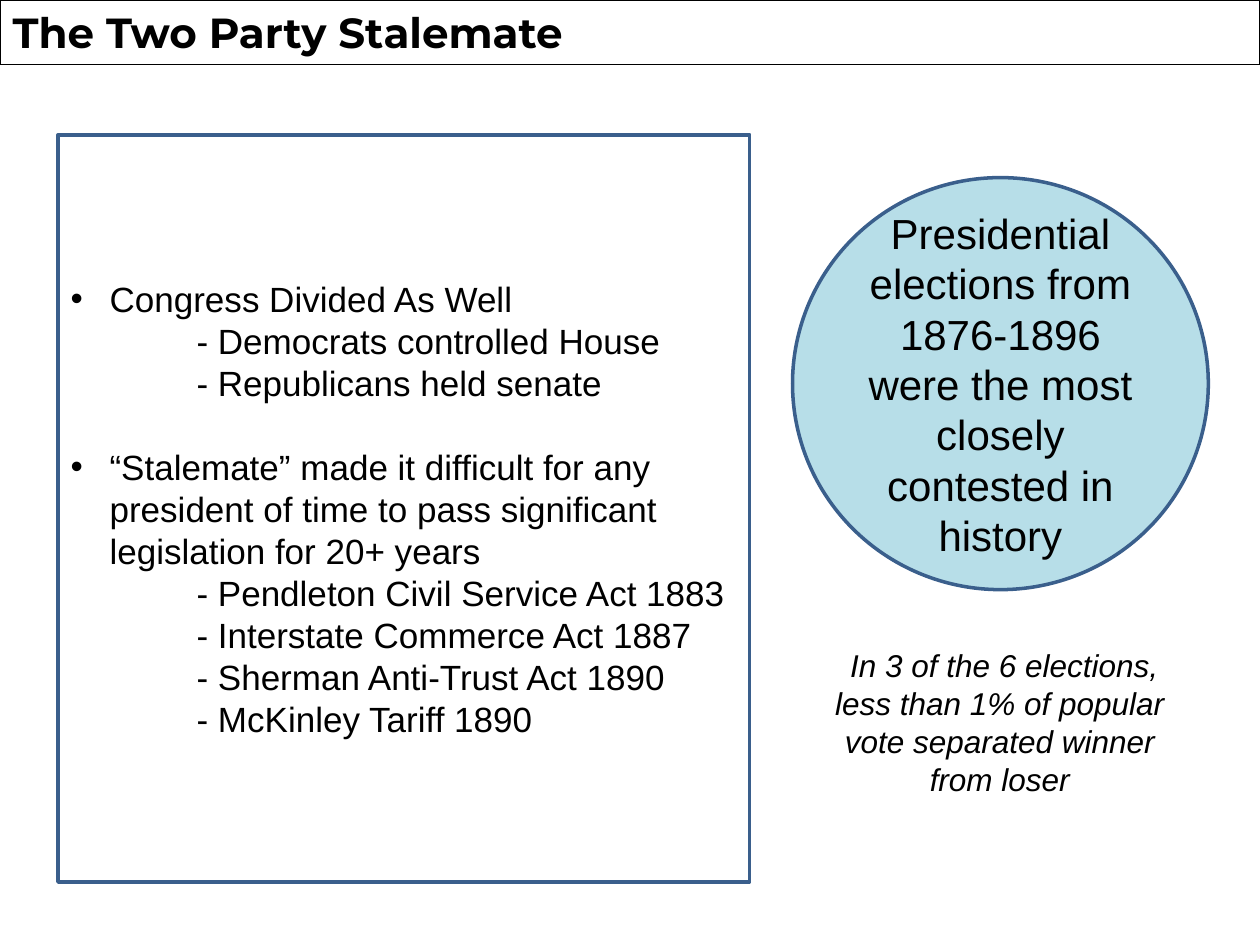
from pptx import Presentation
from pptx.dml.color import RGBColor
from pptx.enum.shapes import MSO_SHAPE
from pptx.enum.text import MSO_ANCHOR, MSO_AUTO_SIZE, PP_ALIGN
from pptx.oxml.xmlchemy import OxmlElement
from pptx.util import Inches, Pt

BLACK = RGBColor(0x00, 0x00, 0x00)
WHITE = RGBColor(0xFF, 0xFF, 0xFF)
BORDER_BLUE = RGBColor(0x3A, 0x5F, 0x8C)
PALE_BLUE = RGBColor(0xB7, 0xDE, 0xE8)

TOPICS = [
    ("Congress Divided As Well",
     ["Democrats controlled House", "Republicans held senate"]),
    ("“Stalemate” made it difficult for any president of time "
     "to pass significant legislation for 20+ years",
     ["Pendleton Civil Service Act 1883", "Interstate Commerce Act 1887",
      "Sherman Anti-Trust Act 1890", "McKinley Tariff 1890"]),
]


def place(shape, left, top, width, height):
    shape.left, shape.top = Inches(left), Inches(top)
    shape.width, shape.height = Inches(width), Inches(height)


def outline(shape, color, width):
    shape.line.color.rgb = color
    shape.line.width = Pt(width)


def set_up_text(shape, anchor):
    text_frame = shape.text_frame
    text_frame.word_wrap = True
    text_frame.auto_size = MSO_AUTO_SIZE.NONE
    text_frame.vertical_anchor = anchor
    return text_frame


def format_paragraph(paragraph, size, align=PP_ALIGN.LEFT, font="Arial",
                     bold=False, italic=False):
    paragraph.alignment = align
    paragraph.space_before = Pt(0)
    for run in paragraph.runs:
        run.font.name = font
        run.font.size = Pt(size)
        run.font.bold = bold
        run.font.italic = italic
        run.font.color.rgb = BLACK


def set_bullet(paragraph, margin, indent, character=None):
    """Set the indents in inches, with a bullet character or none."""
    properties = paragraph._p.get_or_add_pPr()
    properties.set("marL", str(Inches(margin)))
    properties.set("indent", str(Inches(indent)))
    bullet = OxmlElement("a:buChar" if character else "a:buNone")
    if character:
        bullet.set("char", character)
    properties.append(bullet)


def add_title(slide, text):
    title = slide.shapes.title
    place(title, 0, 0, 10, 0.51)
    title.fill.solid()
    title.fill.fore_color.rgb = WHITE
    outline(title, BLACK, 0.75)
    text_frame = set_up_text(title, MSO_ANCHOR.TOP)
    text_frame.text = text
    format_paragraph(text_frame.paragraphs[0], 24, font="Montserrat", bold=True)


def add_topics(slide, topics):
    body = slide.placeholders[1]
    place(body, 0.46, 1.07, 5.49, 5.93)
    outline(body, BORDER_BLUE, 2)
    text_frame = set_up_text(body, MSO_ANCHOR.MIDDLE)
    for number, (heading, details) in enumerate(topics):
        paragraph = text_frame.add_paragraph() if number else text_frame.paragraphs[0]
        paragraph.text = heading
        format_paragraph(paragraph, 20)
        if number:
            paragraph.space_before = Pt(24)
        set_bullet(paragraph, 0.31, -0.31, "•")
        for detail in details:
            paragraph = text_frame.add_paragraph()
            paragraph.text = f"- {detail}"
            format_paragraph(paragraph, 20)
            set_bullet(paragraph, 1, 0)


def add_circle(slide, text):
    circle = slide.shapes.add_shape(
        MSO_SHAPE.OVAL, Inches(6.29), Inches(1.41), Inches(3.3), Inches(3.27))
    circle.shadow.inherit = False
    circle.fill.solid()
    circle.fill.fore_color.rgb = PALE_BLUE
    outline(circle, BORDER_BLUE, 2)
    text_frame = set_up_text(circle, MSO_ANCHOR.MIDDLE)
    text_frame.text = text
    format_paragraph(text_frame.paragraphs[0], 24, PP_ALIGN.CENTER)


def add_caption(slide, text):
    caption = slide.shapes.add_textbox(
        Inches(6.37), Inches(5.08), Inches(3.13), Inches(1.31))
    text_frame = set_up_text(caption, MSO_ANCHOR.TOP)
    text_frame.text = text
    format_paragraph(text_frame.paragraphs[0], 18, PP_ALIGN.CENTER, italic=True)


def main():
    presentation = Presentation()
    presentation.slide_width = Inches(10)
    presentation.slide_height = Inches(7.5)
    slide = presentation.slides.add_slide(presentation.slide_layouts[1])
    add_title(slide, "The Two Party Stalemate")
    add_circle(slide, "Presidential elections from 1876-1896 were the most "
                      "closely contested in history")
    add_caption(slide, " In 3 of the 6 elections, less than 1% of popular vote "
                       "separated winner from loser")
    add_topics(slide, TOPICS)
    presentation.save("out.pptx")


if __name__ == "__main__":
    main()
